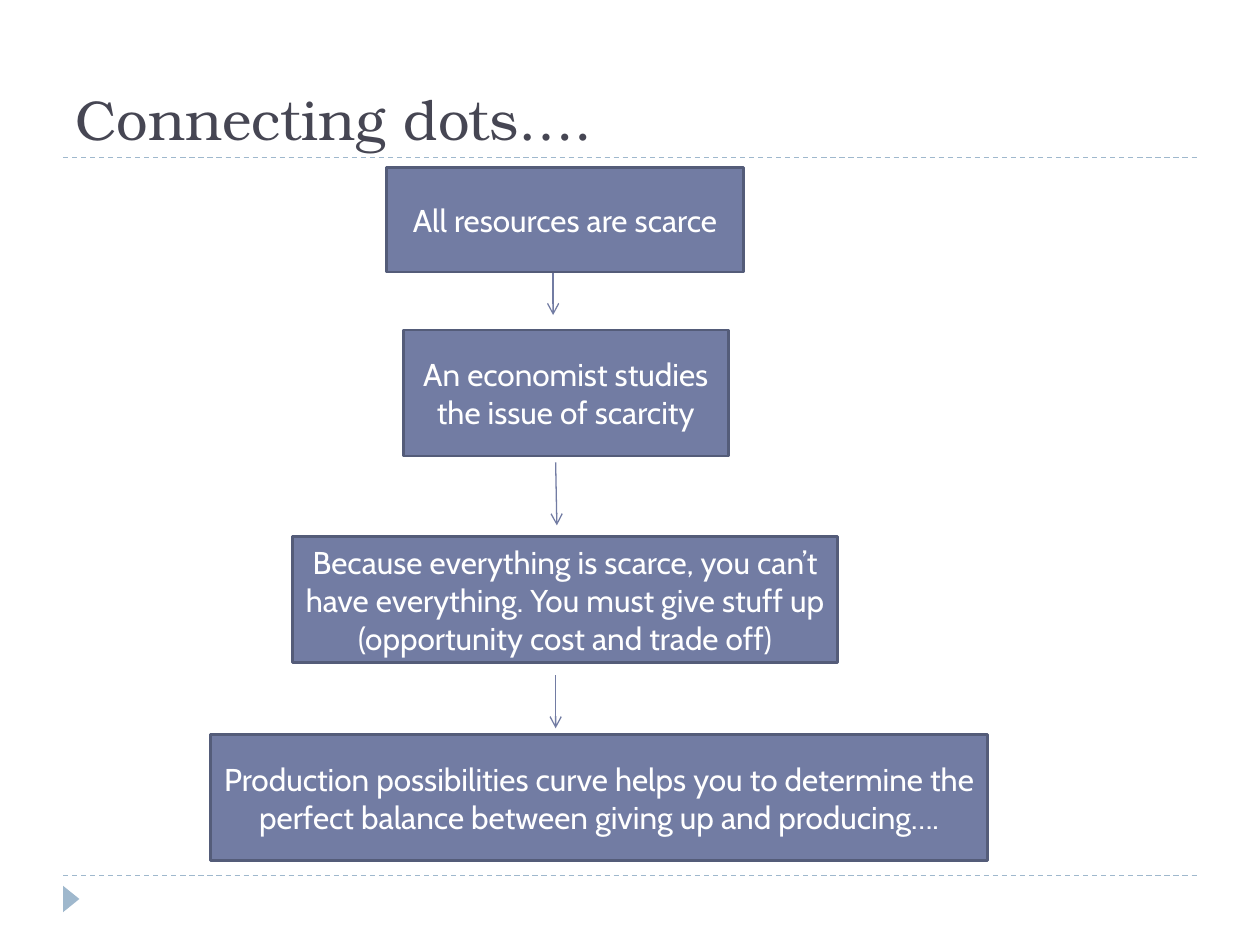
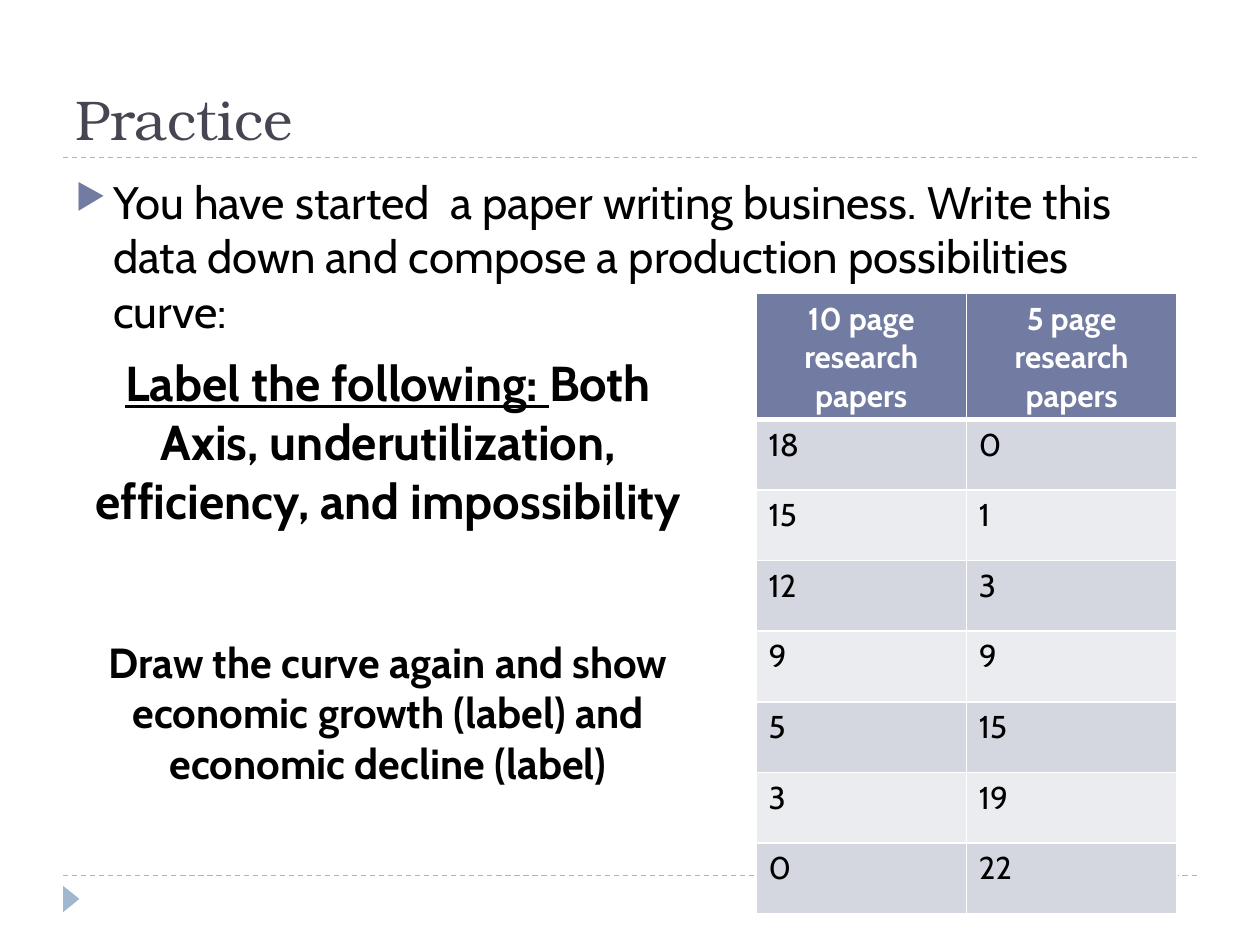
from lxml import etree
from pptx import Presentation
from pptx.dml.color import RGBColor
from pptx.enum.dml import MSO_LINE
from pptx.enum.shapes import MSO_CONNECTOR, MSO_SHAPE
from pptx.enum.text import MSO_ANCHOR, PP_ALIGN
from pptx.oxml.ns import qn
from pptx.util import Inches, Pt

# Shared theme
INDIGO, INDIGO_DARK, SKY = "727CA3", "545C79", "9FB8CD"
SLATE, BLACK, WHITE = "464653", "000000", "FFFFFF"
BANDS = ("D5D7E0", "EBECF0")
TITLE_FONT, BODY_FONT = "TeX Gyre Bonum", "Cabin"


def color(hex_value):
    return RGBColor.from_string(hex_value)


def add_run(paragraph, text, size, hex_color=BLACK, font=BODY_FONT,
            bold=False, underline=False):
    run = paragraph.add_run()
    run.text = text
    run.font.size = Pt(size)
    run.font.name = font
    run.font.color.rgb = color(hex_color)
    run.font.bold = bold
    run.font.underline = underline


def add_textbox(slide, left, top, width, height, align=PP_ALIGN.LEFT,
                anchor=MSO_ANCHOR.TOP):
    """Add a wrapping text box and return its first paragraph."""
    box = slide.shapes.add_textbox(
        Inches(left), Inches(top), Inches(width), Inches(height))
    frame = box.text_frame
    frame.word_wrap = True
    frame.vertical_anchor = anchor
    paragraph = frame.paragraphs[0]
    paragraph.alignment = align
    return paragraph


def add_shape(slide, kind, left, top, width, height, fill):
    shape = slide.shapes.add_shape(
        kind, Inches(left), Inches(top), Inches(width), Inches(height))
    shape.shadow.inherit = False
    shape.fill.solid()
    shape.fill.fore_color.rgb = color(fill)
    shape.line.fill.background()
    return shape


def add_line(slide, start, end, hex_color):
    line = slide.shapes.add_connector(
        MSO_CONNECTOR.STRAIGHT, *map(Inches, start + end))
    line.line.color.rgb = color(hex_color)
    line.line.width = Pt(0.75)
    etree.SubElement(line._element.spPr, qn("a:effectLst"))
    return line


def add_arrow(slide, start, end):
    arrow = add_line(slide, start, end, INDIGO)
    etree.SubElement(arrow.line._get_or_add_ln(), qn("a:tailEnd"), type="arrow")


def add_flow_box(slide, left, top, width, height, text):
    box = add_shape(slide, MSO_SHAPE.RECTANGLE, left, top, width, height, INDIGO)
    box.line.color.rgb = color(INDIGO_DARK)
    box.line.width = Pt(1.5)
    frame = box.text_frame
    frame.word_wrap = True
    frame.vertical_anchor = MSO_ANCHOR.MIDDLE
    paragraph = frame.paragraphs[0]
    paragraph.alignment = PP_ALIGN.CENTER
    add_run(paragraph, text, 18, WHITE)


def set_bullet(paragraph, indent, character, percent, hex_color):
    properties = paragraph._p.get_or_add_pPr()
    properties.set("marL", str(Inches(indent)))
    properties.set("indent", str(-Inches(indent)))
    bullet_color = etree.SubElement(properties, qn("a:buClr"))
    etree.SubElement(bullet_color, qn("a:srgbClr"), val=hex_color)
    etree.SubElement(properties, qn("a:buSzPct"), val=str(percent * 1000))
    etree.SubElement(properties, qn("a:buChar"), char=character)


def set_borders(cell, bottom=1, top=1):
    properties = cell._tc.get_or_add_tcPr()
    for side, width in (("L", 1), ("R", 1), ("T", top), ("B", bottom)):
        border = etree.SubElement(properties, qn(f"a:ln{side}"), w=str(Pt(width)))
        fill = etree.SubElement(border, qn("a:solidFill"))
        etree.SubElement(fill, qn("a:srgbClr"), val=WHITE)


def add_data_table(slide, left, top, column_width, header_height, row_height, rows):
    count, columns = len(rows), len(rows[0])
    table = slide.shapes.add_table(
        count, columns, Inches(left), Inches(top),
        Inches(column_width * columns),
        Inches(header_height + row_height * (count - 1))).table
    table.first_row = table.horz_banding = False
    for column in table.columns:
        column.width = Inches(column_width)
    for index, values in enumerate(rows):
        header = index == 0
        table.rows[index].height = Inches(header_height if header else row_height)
        for cell, value in zip(table.rows[index].cells, values):
            set_borders(cell, bottom=3 if header else 1, top=3 if index == 1 else 1)
            cell.fill.solid()
            cell.fill.fore_color.rgb = color(
                INDIGO if header else BANDS[(index - 1) % 2])
            paragraph = cell.text_frame.paragraphs[0]
            paragraph.alignment = PP_ALIGN.CENTER if header else PP_ALIGN.LEFT
            add_run(paragraph, str(value), 18, WHITE if header else BLACK, bold=header)


def add_base_slide(presentation, title):
    """Blank slide with the dashed rules, corner marker and title."""
    slide = presentation.slides.add_slide(presentation.slide_layouts[6])
    for y in (6.95, 1.25):
        rule = add_line(slide, (0.5, y), (9.5, y), SKY)
        rule.line.dash_style = MSO_LINE.DASH
    marker = add_shape(slide, MSO_SHAPE.ISOSCELES_TRIANGLE,
                       0.46, 7.07, 0.21, 0.13, SKY)
    marker.rotation = 90
    paragraph = add_textbox(slide, 0.5, 0.17, 9, 1.08, anchor=MSO_ANCHOR.BOTTOM)
    add_run(paragraph, title, 32, SLATE, TITLE_FONT)
    return slide


def build_connecting_dots(presentation):
    slide = add_base_slide(presentation, "Connecting dots….")
    steps = (
        (3.07, 1.33, 2.83, 0.83, "All resources are scarce"),
        (3.2, 2.62, 2.58, 1, "An economist studies the issue of scarcity"),
        (2.32, 4.26, 4.33, 1,
         "Because everything is scarce, you can’t have everything. "
         "You must give stuff up (opportunity cost and trade off)"),
        (1.67, 5.83, 6.17, 1,
         "Production possibilities curve helps you to determine the "
         "perfect balance between giving up and producing…."),
    )
    for step in steps:
        add_flow_box(slide, *step)
    # Arrows float in the gaps, slightly left of the box centres
    add_arrow(slide, (4.39, 2.17), (4.39, 2.5))
    add_arrow(slide, (4.41, 3.67), (4.42, 4.17))
    add_arrow(slide, (4.41, 5.36), (4.41, 5.78))


def build_practice(presentation):
    slide = add_base_slide(presentation, "Practice")

    # Task
    task = add_textbox(slide, 0.5, 1.33, 9, 1.08)
    task.space_before = Pt(6)
    set_bullet(task, 0.3, "▶", 76, INDIGO)
    add_run(task, "You have started  a paper writing business. Write this data "
                  "down and compose a production possibilities curve:", 26)

    # Production data
    output_pairs = [(18, 0), (15, 1), (12, 3), (9, 9), (5, 15), (3, 19), (0, 22)]
    headers = ("10 page research papers", "5 page research papers")
    add_data_table(slide, 6, 2.33, 1.67, 0.91, 0.56, [headers] + output_pairs)

    # Instructions
    labels = add_textbox(slide, 0.58, 2.75, 5, 1.99, PP_ALIGN.CENTER)
    add_run(labels, "Label the following: ", 28, bold=True, underline=True)
    add_run(labels, "Both Axis, underutilization, efficiency, and impossibility",
            28, bold=True)
    redraw = add_textbox(slide, 0.33, 5, 5.5, 1.31, PP_ALIGN.CENTER)
    add_run(redraw, "Draw the curve again and show economic growth (label) "
                    "and economic decline (label)", 24, bold=True)


def main():
    presentation = Presentation()
    presentation.slide_width = Inches(10)
    presentation.slide_height = Inches(7.5)
    build_connecting_dots(presentation)
    build_practice(presentation)
    presentation.save("out.pptx")


if __name__ == "__main__":
    main()
